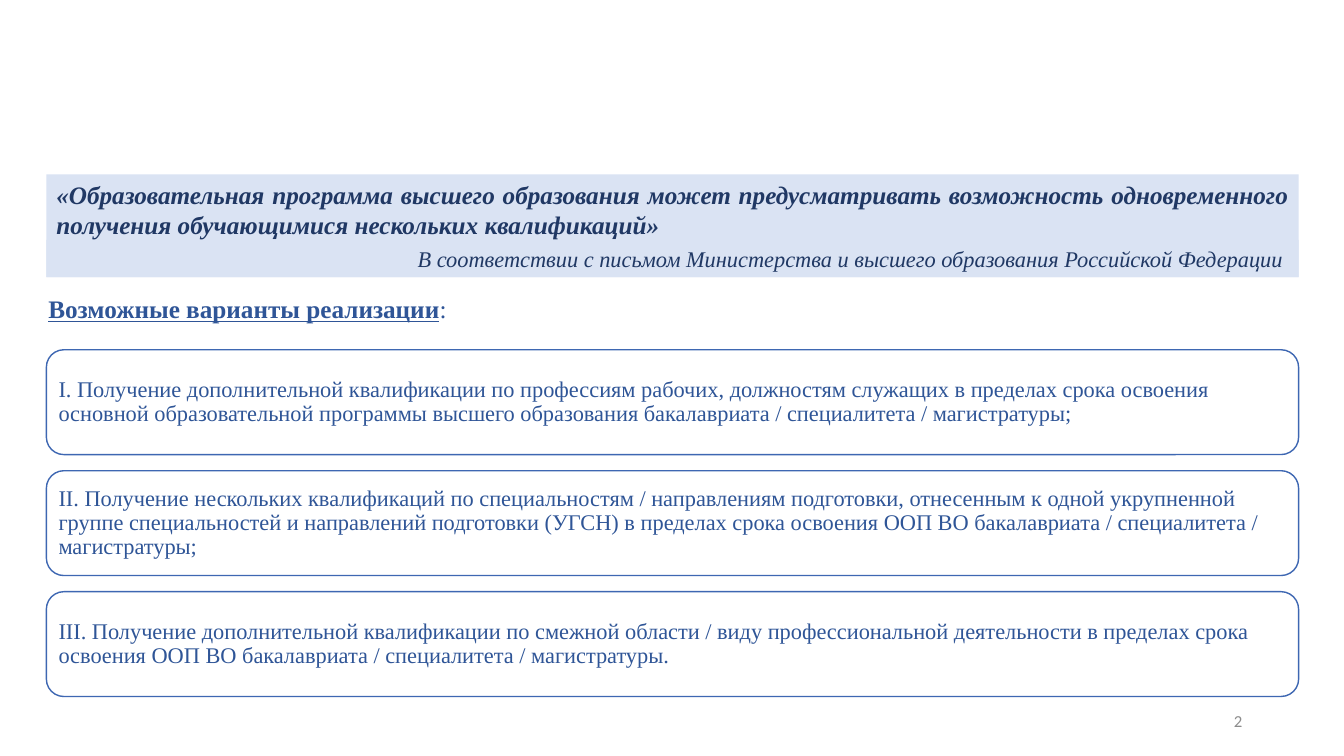
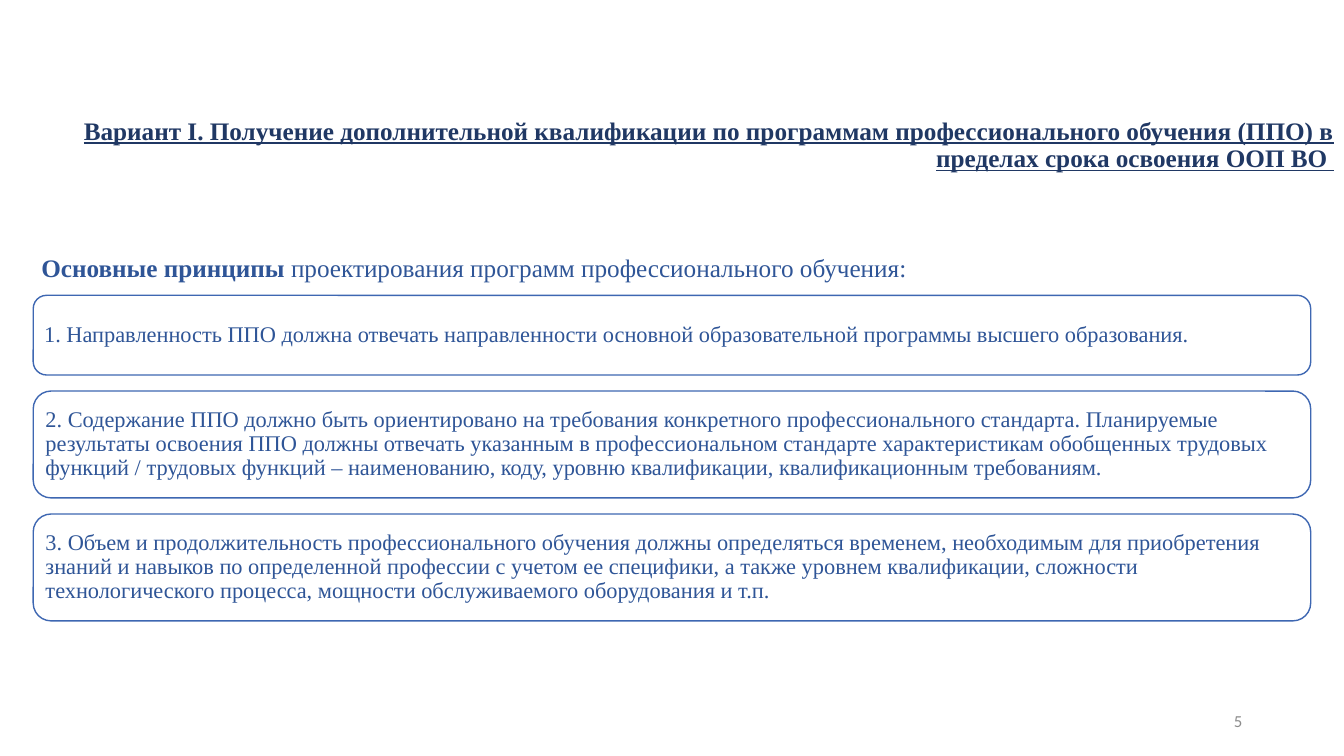
from dataclasses import dataclass

from pptx import Presentation
from pptx.dml.color import RGBColor
from pptx.enum.shapes import MSO_SHAPE
from pptx.enum.text import MSO_ANCHOR, MSO_AUTO_SIZE, PP_ALIGN
from pptx.util import Inches, Pt


@dataclass(frozen=True)
class Theme:
    """Colours, fonts and type sizes shared by the slides."""
    navy: str = "203864"
    blue: str = "2F5597"
    outline: str = "3E67B2"
    band: str = "DAE3F3"
    white: str = "FFFFFF"
    grey: str = "8C8C8C"
    serif: str = "Times New Roman"
    sans: str = "Calibri"
    heading: int = 18
    body: int = 16
    footer: int = 12


@dataclass(frozen=True)
class Box:
    """A region of the slide, in inches."""
    left: float
    top: float
    width: float
    height: float

    def lengths(self):
        return [Inches(n) for n in (self.left, self.top, self.width, self.height)]


THEME = Theme()
SLIDE = Box(0, 0, 13.33, 7.5)
NUMBER_BOX = Box(9.42, 6.95, 3, 0.4)
CARD_GAP = 0.16
TITLE_ONLY, BLANK = 5, 6


def write(shape, spans, size=THEME.body, color=THEME.blue, font=THEME.serif,
          italic=False, align=PP_ALIGN.LEFT, anchor=MSO_ANCHOR.MIDDLE,
          spacing=1.0, inset=(0.1, 0.05)):
    """Fill a shape with one paragraph of (text, bold, underline) spans."""
    frame = shape.text_frame
    frame.word_wrap = True
    frame.auto_size = MSO_AUTO_SIZE.NONE
    frame.vertical_anchor = anchor
    frame.margin_left = frame.margin_right = Inches(inset[0])
    frame.margin_top = frame.margin_bottom = Inches(inset[1])
    para = frame.paragraphs[0]
    para.alignment = align
    para.line_spacing = spacing
    for text, bold, underline in spans:
        span = para.add_run()
        span.text = text
        span.font.name = font
        span.font.size = Pt(size)
        span.font.color.rgb = RGBColor.from_string(color)
        span.font.bold = bold
        span.font.italic = italic
        span.font.underline = underline


def add_panel(page, box, fill, kind=MSO_SHAPE.RECTANGLE, line=None):
    panel = page.shapes.add_shape(kind, *box.lengths())
    panel.shadow.inherit = False
    panel.fill.solid()
    panel.fill.fore_color.rgb = RGBColor.from_string(fill)
    if line:
        panel.line.color.rgb = RGBColor.from_string(line)
        panel.line.width = Pt(1)
    else:
        panel.line.fill.background()
    return panel


def add_page(deck, layout, number):
    """Add a slide with its page number."""
    page = deck.slides.add_slide(deck.slide_layouts[layout])
    label = page.shapes.add_textbox(*NUMBER_BOX.lengths())
    write(label, [(str(number), False, False)], size=THEME.footer,
          color=THEME.grey, font=THEME.sans, align=PP_ALIGN.RIGHT)
    return page


def add_subheading(page, box, spans):
    label = page.shapes.add_textbox(*box.lengths())
    write(label, spans, size=THEME.heading, spacing=0.9, inset=(0.08, 0.08))


def add_cards(page, left, top, width, cards):
    """Stack outlined cards, given as (height, text), at equal gaps."""
    for height, text in cards:
        card = add_panel(page, Box(left, top, width, height), THEME.white,
                         MSO_SHAPE.ROUNDED_RECTANGLE, THEME.outline)
        write(card, [(text, False, False)], spacing=0.9, inset=(0.07, 0.07))
        top += height + CARD_GAP


def add_quote(page, box, quote, source):
    """Place a quotation band with its source line at the bottom."""
    source_height = 0.37
    band = add_panel(page, box, THEME.band)
    write(band, [(quote, True, False)], size=THEME.heading, color=THEME.navy,
          italic=True, align=PP_ALIGN.JUSTIFY, anchor=MSO_ANCHOR.TOP)
    source_top = box.top + box.height - source_height
    credit = add_panel(page, Box(box.left, source_top, box.width, source_height),
                       THEME.band)
    write(credit, [(source, False, False)], color=THEME.navy, italic=True,
          align=PP_ALIGN.RIGHT, anchor=MSO_ANCHOR.TOP)


def add_title(page, box, text):
    title = page.shapes.title
    title.left, title.top, title.width, title.height = box.lengths()
    write(title, [(text, True, True)], size=THEME.heading, color=THEME.navy,
          align=PP_ALIGN.RIGHT, spacing=0.9)


def build_options(deck):
    page = add_page(deck, BLANK, 2)
    left, width, height = 0.46, 12.42, 1.04
    # Quotation
    add_quote(
        page, Box(left, 1.73, width, 1.02),
        "«Образовательная программа высшего образования может предусматривать "
        "возможность одновременного получения обучающимися нескольких квалификаций»",
        "В соответствии с письмом Министерства и высшего образования "
        "Российской Федерации ")
    # Options
    add_subheading(page, Box(0.4, 2.82, 12.54, 0.52), [
        ("Возможные варианты реализации", True, True), (":", False, False)])
    options = (
        "I. Получение дополнительной квалификации по профессиям рабочих, "
        "должностям служащих в пределах срока освоения основной образовательной "
        "программы высшего образования бакалавриата / специалитета / магистратуры;",
        "II. Получение нескольких квалификаций по специальностям / направлениям "
        "подготовки, отнесенным к одной укрупненной группе специальностей и "
        "направлений подготовки (УГСН) в пределах срока освоения ООП ВО "
        "бакалавриата / специалитета / магистратуры;",
        "III. Получение дополнительной квалификации по смежной области / виду "
        "профессиональной деятельности в пределах срока освоения ООП ВО "
        "бакалавриата / специалитета / магистратуры.",
    )
    add_cards(page, left, 3.47, width, [(height, text) for text in options])


def build_principles(deck):
    page = add_page(deck, TITLE_ONLY, 5)
    left, width = 0.33, 12.67
    # Title
    add_title(page, Box(0, 0.72, SLIDE.width, 1.45),
              "Вариант I. Получение дополнительной квалификации по программам "
              "профессионального обучения (ППО) в пределах срока освоения ООП ВО ")
    # Principles
    add_subheading(page, Box(left, 2.41, width, 0.52), [
        ("Основные принципы ", True, False),
        ("проектирования программ профессионального обучения:", False, False)])
    add_cards(page, left, 2.93, width, [
        (0.79, "1. Направленность ППО должна отвечать направленности основной "
               "образовательной программы высшего образования."),
        (1.06, "2. Содержание ППО должно быть ориентировано на требования "
               "конкретного профессионального стандарта. Планируемые результаты "
               "освоения ППО должны отвечать указанным в профессиональном стандарте "
               "характеристикам обобщенных трудовых функций / трудовых функций – "
               "наименованию, коду, уровню квалификации, квалификационным "
               "требованиям."),
        (1.06, "3. Объем и продолжительность профессионального обучения должны "
               "определяться временем, необходимым для приобретения знаний и навыков "
               "по определенной профессии с учетом ее специфики, а также уровнем "
               "квалификации, сложности технологического процесса, мощности "
               "обслуживаемого оборудования и т.п."),
    ])


def main():
    deck = Presentation()
    deck.slide_width = Inches(SLIDE.width)
    deck.slide_height = Inches(SLIDE.height)
    build_options(deck)
    build_principles(deck)
    deck.save("out.pptx")


if __name__ == "__main__":
    main()
